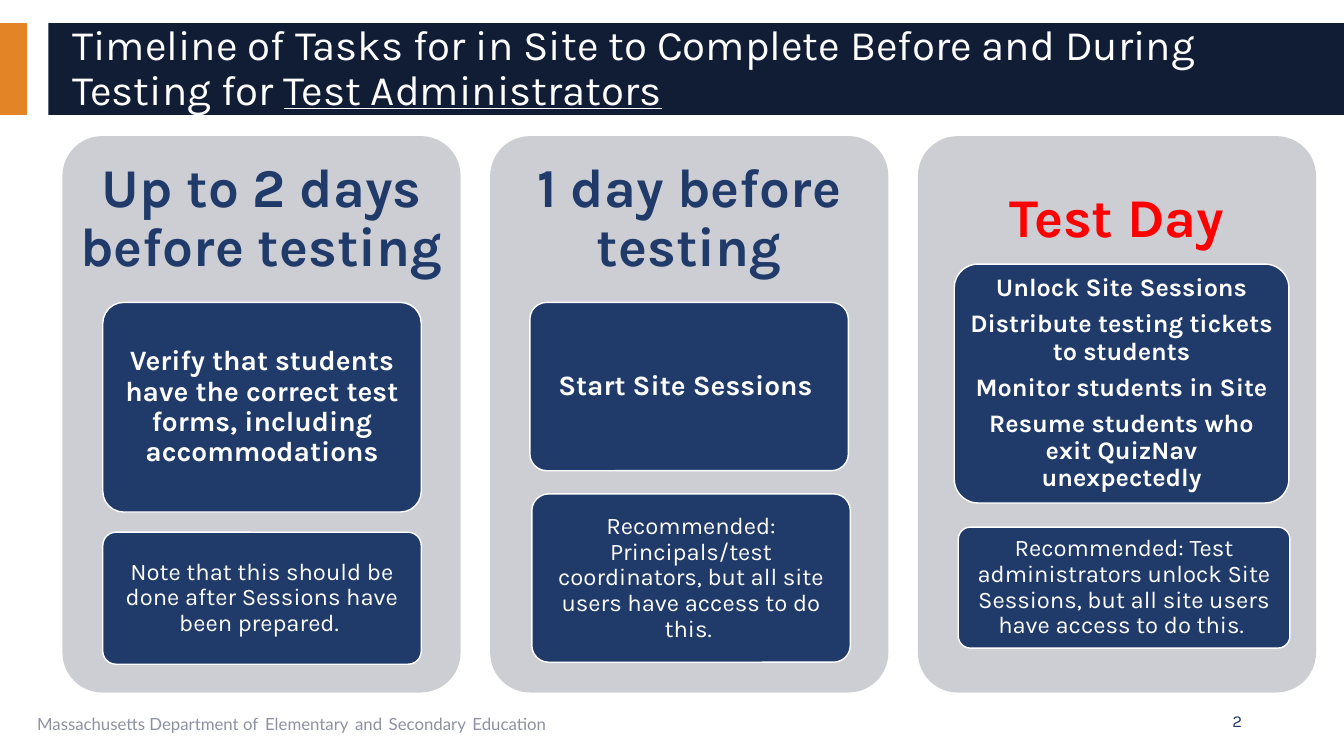
import pptx
import pptx.util
import pptx.dml.color
import pptx.enum.shapes
import pptx.enum.text

COLORS = {
    "navy": "203B6A", "dark": "101D35", "orange": "E38526", "panel": "CDCED4",
    "white": "FFFFFF", "red": "FF0000", "gray": "8D92A1",
}
WIDE, HIGH = pptx.util.Inches(13.33), pptx.util.Inches(7.5)
COL, ROW = WIDE / 40, HIGH / 30
SHAPE = pptx.enum.shapes.MSO_SHAPE
ALIGN = pptx.enum.text.PP_ALIGN
ANCHOR = pptx.enum.text.MSO_ANCHOR

PANELS = [
    ("Up to 2 days before testing", "navy", [
        ((1.2, 6.6, 9.48, 8.32), 20, True,
         ["Verify that students have the correct test forms, including accommodations"]),
        ((1.2, 15.72, 9.48, 5.24), 17, False,
         ["Note that this should be done after Sessions have been prepared. "]),
    ]),
    ("1 day before testing", "navy", [
        ((1.18, 6.6, 9.48, 6.68), 20, True, ["Start Site Sessions "]),
        ((1.24, 14.2, 9.48, 6.68), 17, False,
         ["Recommended: Principals/test coordinators, but all site users have access to do this. "]),
    ]),
    ("Test Day", "red", [
        ((1.08, 5.08, 9.96, 9.48), 18, True,
         ["Unlock Site Sessions", "Distribute testing tickets to students",
          "Monitor students in Site", "Resume students who exit QuizNav unexpectedly"]),
        ((1.2, 15.52, 9.87, 4.8), 17, False,
         ["Recommended: Test administrators unlock Site Sessions, but all site users have access to do this. "]),
    ]),
]


def color(name):
    return pptx.dml.color.RGBColor.from_string(COLORS[name])


def scale(box):
    x, y, w, h = box
    return [round(n) for n in (x * COL, y * ROW, w * COL, h * ROW)]


def block(slide, box, fill, kind=SHAPE.RECTANGLE, line=None):
    shape = slide.shapes.add_shape(kind, *scale(box))
    shape.shadow.inherit = False
    shape.fill.solid()
    shape.fill.fore_color.rgb = color(fill)
    if kind == SHAPE.ROUNDED_RECTANGLE:
        shape.adjustments[0] = 0.1
    if line:
        shape.line.color.rgb = color(line)
        shape.line.width = pptx.util.Pt(1)
    else:
        shape.line.fill.background()
    return shape


def label(slide, box):
    return slide.shapes.add_textbox(*scale(box)).text_frame


def setup(frame, side=0.1, edge=0.05, anchor=ANCHOR.MIDDLE):
    frame.word_wrap = True
    frame.vertical_anchor = anchor
    frame.margin_left = frame.margin_right = pptx.util.Inches(side)
    frame.margin_top = frame.margin_bottom = pptx.util.Inches(edge)


def write(para, text, size, tint, bold=False, font="Karla"):
    run = para.add_run()
    run.text = text
    run.font.name = font
    run.font.size = pptx.util.Pt(size)
    run.font.bold = bold
    run.font.color.rgb = color(tint)
    return run


def center(frame, lines, size, tint, bold):
    for i, text in enumerate(lines):
        para = frame.add_paragraph() if i else frame.paragraphs[0]
        para.alignment = ALIGN.CENTER
        para.line_spacing = 0.9
        para.space_after = pptx.util.Pt(round(size * 0.35, 1))
        write(para, text, size, tint, bold)


def header(slide, box):
    x, y, w, h = box
    block(slide, (x, y, 0.81, h), "orange")
    block(slide, (x + 1.44, y, w - 1.44, h), "dark")
    frame = label(slide, (x + 1.86, y + 0.36, 37.32, 2.96))
    setup(frame)
    para = frame.paragraphs[0]
    para.line_spacing = 0.9
    write(para, "Timeline of Tasks for in Site to Complete Before and During Testing for ",
          30, "white")
    write(para, "Test Administrators", 30, "white").font.underline = True


def panel(slide, box, title, tint, cards):
    x, y, w, h = box
    block(slide, box, "panel", SHAPE.ROUNDED_RECTANGLE)
    frame = label(slide, (x, y, w, 6.64))
    setup(frame, 0.16, 0.16)
    center(frame, [title], 39, tint, True)
    for (dx, dy, cw, ch), size, bold, lines in cards:
        card = block(slide, (x + dx, y + dy, cw, ch), "navy",
                     SHAPE.ROUNDED_RECTANGLE, "white")
        setup(card.text_frame, 0.05, 0.04)
        center(card.text_frame, lines, size, "white", bold)


def footer(slide, box):
    x, y, w, h = box
    frame = label(slide, (x, y, 25.32, h))
    setup(frame, anchor=ANCHOR.TOP)
    para = frame.paragraphs[0]
    words = ["Massachusetts Department of", "Elementary", "and", "Secondary", "Education"]
    for i, word in enumerate(words):
        if i:
            write(para, " ", 18, "navy", font="Lato")
        write(para, word, 12, "gray", font="Lato")
    frame = label(slide, (x + w - 9, y, 9, h))
    setup(frame)
    para = frame.paragraphs[0]
    para.alignment = ALIGN.RIGHT
    write(para, "2", 12, "navy")


def main():
    deck = pptx.Presentation()
    deck.slide_width, deck.slide_height = WIDE, HIGH
    slide = deck.slides.add_slide(deck.slide_layouts[6])
    header(slide, (0, 0.92, 40, 3.64))
    for i, (title, tint, cards) in enumerate(PANELS):
        panel(slide, (1.86 + i * 12.73, 5.4, 11.85, 22.08), title, tint, cards)
    footer(slide, (0.81, 27.8, 36.45, 1.6))
    deck.save("out.pptx")


if __name__ == "__main__":
    main()
